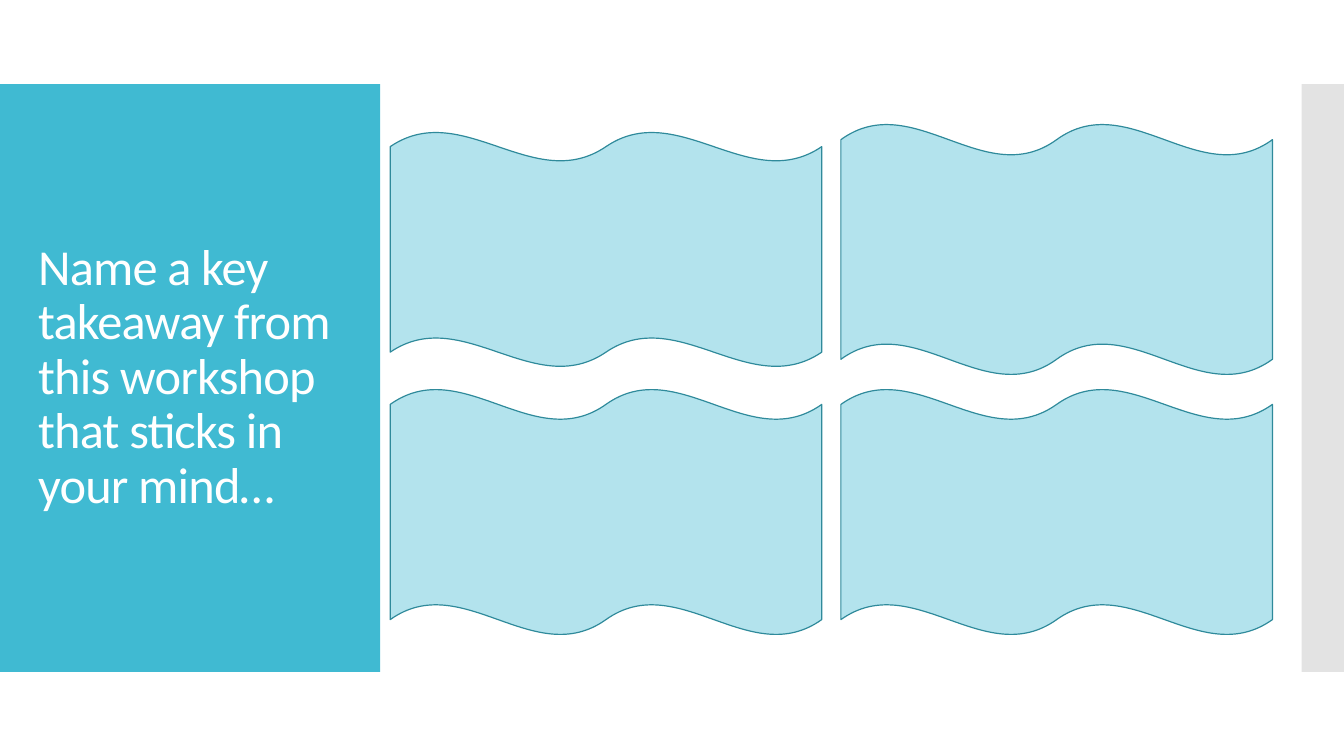
from lxml import etree
from pptx import Presentation
from pptx.dml.color import RGBColor
from pptx.enum.shapes import MSO_SHAPE as SHAPE
from pptx.enum.text import MSO_ANCHOR as ANCHOR
from pptx.oxml.ns import qn
from pptx.util import Inches, Pt

TEAL = RGBColor(0x40, 0xBA, 0xD2)
PALE_TEAL = RGBColor(0xB3, 0xE3, 0xED)
DARK_TEAL = RGBColor(0x2F, 0x8A, 0x9B)
GRAY = RGBColor(0xC8, 0xC8, 0xC8)
WHITE = RGBColor(0xFF, 0xFF, 0xFF)

SLIDE_W, SLIDE_H = 13.33, 7.5
BAND_TOP, BAND_H = SLIDE_H / 9, SLIDE_H * 7 / 9
PANEL_W, STRIP_W = 3.77, 0.42
WAVE_W, WAVE_GAP = 4.28, 0.19
WAVE_ROWS = [[(1.31, 2.33), (1.23, 2.49)], [(3.86, 2.44), (3.86, 2.44)]]


def add_filled(slide, kind, box, fill):
    sp = slide.shapes.add_shape(kind, *map(Inches, box))
    sp.shadow.inherit = False
    sp.fill.solid()
    sp.fill.fore_color.rgb = fill
    sp.line.fill.background()
    return sp


def add_title_panel(slide, box, text):
    add_filled(slide, SHAPE.RECTANGLE, box, TEAL)
    left, top, width, height = box
    text_box = (left + 0.28, top + 0.4, width - 0.55, height - 0.8)
    tf = slide.shapes.add_textbox(*map(Inches, text_box)).text_frame
    tf.word_wrap = True
    tf.vertical_anchor = ANCHOR.MIDDLE
    p = tf.paragraphs[0]
    p.line_spacing = 0.9
    r = p.add_run()
    r.text = text
    r.font.name = "Calibri"
    r.font.size = Pt(36)
    r.font.color.rgb = WHITE
    r.font._element.set("spc", "-60")


def add_side_strip(slide, box):
    sp = add_filled(slide, SHAPE.RECTANGLE, box, GRAY)
    color = sp._element.spPr.find(qn("a:solidFill"))[0]
    etree.SubElement(color, qn("a:alpha")).set("val", "50000")


def add_wave_grid(slide, left):
    for row in WAVE_ROWS:
        for col, (top, height) in enumerate(row):
            x = left + col * (WAVE_W + WAVE_GAP)
            sp = add_filled(slide, SHAPE.DOUBLE_WAVE, (x, top, WAVE_W, height), PALE_TEAL)
            sp.line.color.rgb = DARK_TEAL
            sp.line.width = Pt(0.85)


def main():
    prs = Presentation()
    prs.slide_width, prs.slide_height = Inches(SLIDE_W), Inches(SLIDE_H)
    slide = prs.slides.add_slide(prs.slide_layouts[6])
    add_title_panel(slide, (0, BAND_TOP, PANEL_W, BAND_H),
                    "Name a key takeaway from this workshop that sticks in your mind…")
    add_side_strip(slide, (SLIDE_W - STRIP_W, BAND_TOP, STRIP_W, BAND_H))
    add_wave_grid(slide, PANEL_W + 0.1)
    prs.save("out.pptx")


if __name__ == "__main__":
    main()
